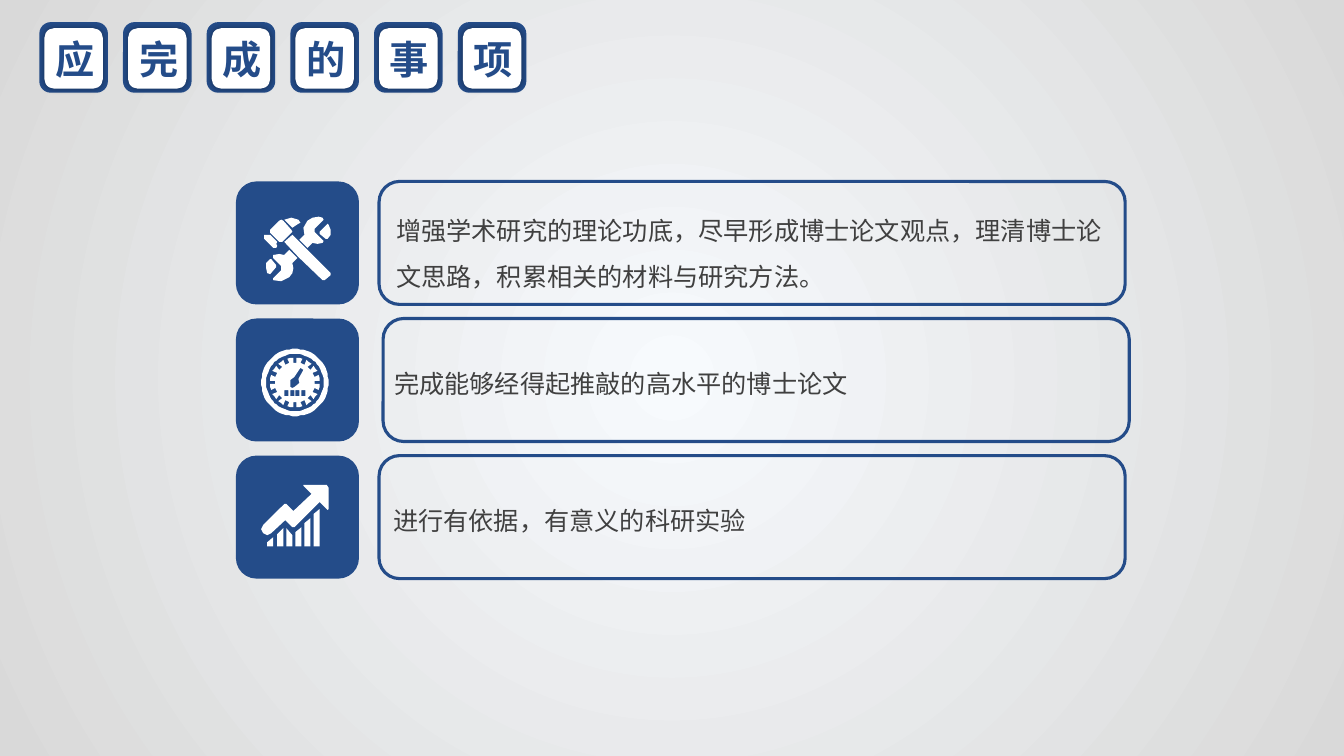
import math

import pptx
import pptx.dml.color
import pptx.enum.dml
import pptx.enum.shapes
import pptx.enum.text
import pptx.oxml
import pptx.oxml.ns
import pptx.util

COLORS = {"navy": "244C89", "white": "FFFFFF", "text": "404040",
          "glow": "F7FAFD", "edge": "D9D9D9"}
CELL = pptx.util.Inches(0.1)
TITLE = "应完成的事项"
TILE_PITCH = 8.3
ROW_TOP, ROW_PITCH, ROW_HEIGHT = 18, 13.6, 12.2

TOOLS = [
    [(7, 42), (8, 42), (13, 48), (13, 50), (7, 57), (4, 56), (3, 51), (3, 46), (6, 43)],
    [(26, 33), (34, 41), (29, 46), (30, 51), (29, 56), (26, 60), (18, 64), (10, 63),
     (10, 61), (18, 53), (18, 49), (10, 41), (10, 38), (16, 37), (21, 38)],
    [(29, 18), (35, 24), (67, 56), (67, 58), (61, 63), (59, 63), (35, 40), (21, 25)],
    [(7, 18), (14, 25), (13, 27), (14, 29), (13, 31), (10, 31), (1, 22), (1, 18), (4, 18)],
    [(64, 7), (65, 8), (67, 13), (67, 18), (64, 22), (62, 22), (56, 17), (56, 15), (63, 8)],
    [(18, 3), (20, 4), (28, 13), (29, 15), (19, 25), (16, 25), (7, 16), (7, 13), (16, 4)],
    [(28, 1), (35, 3), (37, 6), (35, 7), (29, 11), (21, 3)],
    [(55, 0), (59, 1), (60, 3), (51, 12), (51, 15), (60, 24), (59, 26), (54, 27), (49, 26),
     (44, 31), (36, 23), (41, 18), (40, 11), (44, 4), (49, 1)],
]
GROWTH_BARS = [(6, 57, 52), (16, 49, 43), (25, 43, 50), (34, 47, 42), (43, 38, 33), (52, 29, 24)]
GROWTH_ARROW = [(42, 0), (65, 0), (67, 3), (67, 24), (66, 25), (58, 17), (33, 42), (31, 42),
                (24, 35), (10, 48), (6, 50), (2, 48), (0, 44), (2, 40), (23, 19), (25, 19),
                (32, 26), (50, 9), (42, 1)]
NEEDLE = [(39, 19), (42, 21), (37, 30), (38, 34), (33, 38), (31, 39), (29, 38), (29, 31), (33, 28)]


def polar(radius, angle, center=33.5):
    return center + radius * math.cos(angle), center + radius * math.sin(angle)


def circle(radius, steps=72):
    return [polar(radius, math.tau * step / steps) for step in range(steps)]


def box(left, top, width, height):
    return [(left, top), (left + width, top), (left + width, top + height), (left, top + height)]


def gauge_icon():
    notch = [(25, -0.07), (20, -0.09), (20, 0.09), (25, 0.07), (25, 0.2)]
    dial = [polar(radius, math.tau * tick / 16 + turn)
            for tick in range(16) for radius, turn in notch]
    digits = [box(23 + 5.7 * digit, 41, 4, 6) for digit in range(4)]
    return [circle(33.5), circle(28.5), dial, NEEDLE, *digits]


def growth_icon():
    bars = [[(left, start), (left + 6, end), (left + 6, 61), (left, 61)]
            for left, start, end in GROWTH_BARS]
    return [*bars, GROWTH_ARROW]


class SlideBuilder:
    font_name = "Arial"

    def __init__(self, presentation):
        self.slide = presentation.slides.add_slide(presentation.slide_layouts[5])

    def color(self, name):
        return pptx.dml.color.RGBColor.from_string(COLORS[name])

    def place(self, left, top, width, height):
        return [round(CELL * length) for length in (left, top, width, height)]

    def background(self):
        fill = self.slide.background.fill
        fill.gradient()
        for stop, name in zip(fill.gradient_stops, ("glow", "edge")):
            stop.color.rgb = self.color(name)
        gradient = self.slide.element.find(".//" + pptx.oxml.ns.qn("a:gradFill"))
        gradient.remove(gradient.find(pptx.oxml.ns.qn("a:lin")))
        gradient.append(pptx.oxml.parse_xml(
            f'<a:path {pptx.oxml.ns.nsdecls("a")} path="circle">'
            '<a:fillToRect l="50000" t="50000" r="50000" b="50000"/></a:path>'))

    def paint(self, shape, fill=None, line=None):
        shape.shadow.inherit = False
        if fill:
            shape.fill.solid()
            shape.fill.fore_color.rgb = self.color(fill)
        else:
            shape.fill.background()
        if line:
            shape.line.color.rgb = self.color(line)
            shape.line.width = pptx.util.Pt(2.25)
        else:
            shape.line.fill.background()

    def panel(self, area, fill=None, line=None):
        shape = self.slide.shapes.add_shape(
            pptx.enum.shapes.MSO_SHAPE.ROUNDED_RECTANGLE, *self.place(*area))
        self.paint(shape, fill, line)
        return shape

    def tile(self, left, top):
        self.panel((left, top, 6.8, 7), "navy")
        face = self.panel((left + 0.5, top + 0.6, 5.8, 6), "white")
        effects = face.element.find(".//" + pptx.oxml.ns.qn("a:effectLst"))
        effects.append(pptx.oxml.parse_xml(
            f'<a:outerShdw {pptx.oxml.ns.nsdecls("a")} blurRad="63500" dist="0">'
            '<a:srgbClr val="000000"><a:alpha val="40000"/></a:srgbClr></a:outerShdw>'))

    def style_text(self, paragraph, size, color, bold=False):
        paragraph.alignment = pptx.enum.text.PP_ALIGN.LEFT
        paragraph.font.name = self.font_name
        paragraph.font.size = pptx.util.Pt(size)
        paragraph.font.bold = bold
        paragraph.font.color.rgb = self.color(color)

    def title(self, text, area, spacing):
        shape = self.slide.shapes.title
        shape.left, shape.top, shape.width, shape.height = self.place(*area)
        frame = shape.text_frame
        frame.text = text
        frame.margin_left = frame.margin_right = frame.margin_top = frame.margin_bottom = 0
        frame.vertical_anchor = pptx.enum.text.MSO_ANCHOR.MIDDLE
        frame.word_wrap = False
        self.style_text(frame.paragraphs[0], 28, "navy", True)
        properties = shape.element.find(".//" + pptx.oxml.ns.qn("a:defRPr"))
        properties.set("spc", str(round(spacing * 100)))
        tree = self.slide.shapes.element
        tree.remove(shape.element)
        tree.append(shape.element)

    def text(self, text, area):
        frame = self.slide.shapes.add_textbox(*self.place(*area)).text_frame
        frame.word_wrap = True
        frame.text = text
        paragraph = frame.paragraphs[0]
        paragraph.line_spacing = 1.5
        self.style_text(paragraph, 18, "text")

    def icon(self, contours, left, top):
        first, *others = contours
        builder = self.slide.shapes.build_freeform(*first[0], scale=CELL / 10)
        builder.add_line_segments(first[1:])
        for contour in others:
            builder.move_to(*contour[0])
            builder.add_line_segments(contour[1:])
        origin_x, origin_y = self.place(left, top, 0, 0)[:2]
        self.paint(builder.convert_to_shape(origin_x, origin_y), "white")


def main():
    presentation = pptx.Presentation()
    presentation.slide_width = pptx.util.Inches(13.33)
    presentation.slide_height = pptx.util.Inches(7.5)
    builder = SlideBuilder(presentation)
    builder.background()

    for column in range(len(TITLE)):
        builder.tile(3.9 + TILE_PITCH * column, 2.2)
    builder.title(TITLE, (5.5, 2.8, 50, 6), TILE_PITCH * 7.2 - 28)

    tasks = [
        (37.6, TOOLS, (26.1, 21.5), (38.3, 19.4, 74, 9.6),
         "增强学术研究的理论功底，尽早形成博士论文观点，理清博士论文思路，积累相关的材料与研究方法。"),
        (38, gauge_icon(), (25.9, 34.6), (38.1, 34.6, 47.5, 5),
         "完成能够经得起推敲的高水平的博士论文"),
        (37.6, growth_icon(), (25.9, 48.1), (38, 48.1, 37.4, 5),
         "进行有依据，有意义的科研实验"),
    ]
    for row, (frame_left, icon, icon_corner, text_area, text) in enumerate(tasks):
        top = ROW_TOP + ROW_PITCH * row
        builder.panel((frame_left, top, 74, ROW_HEIGHT), line="navy")
        builder.panel((23.4, top, 12.2, ROW_HEIGHT), "navy")
        builder.icon(icon, *icon_corner)
        builder.text(text, text_area)

    presentation.save("out.pptx")


if __name__ == "__main__":
    main()
